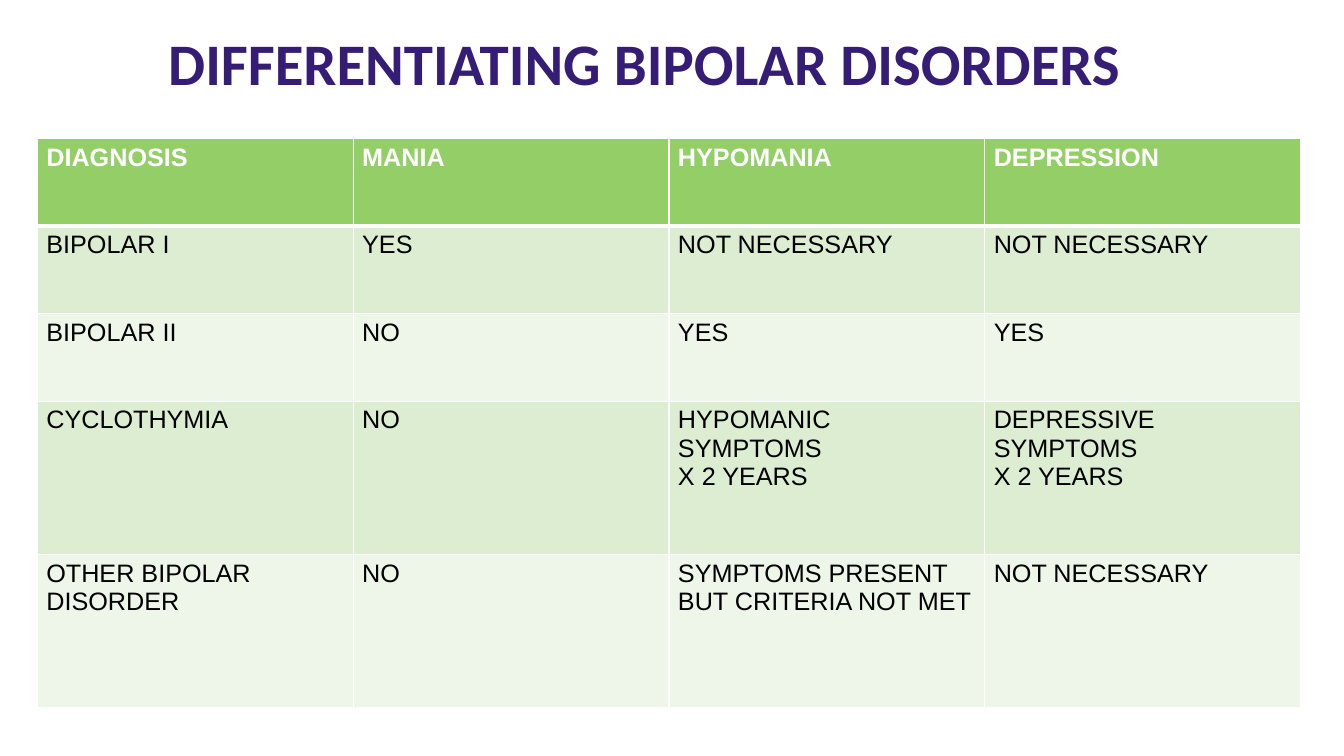
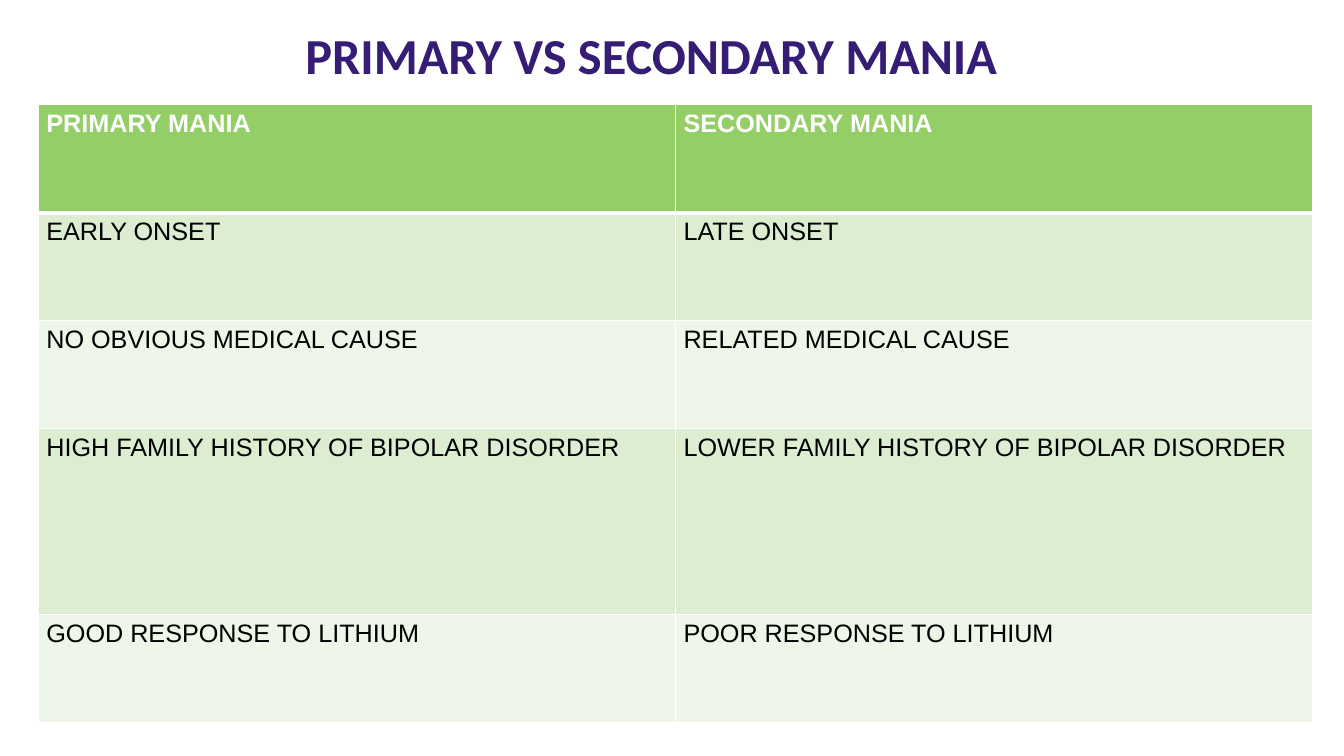
from lxml import etree
from pptx import Presentation, util as u
from pptx.dml.color import RGBColor
from pptx.enum import text
from pptx.oxml.ns import qn

COLORS = {
    "title": "351C75",
    "header": "94CE67",
    "band_dark": "DCEDD2",
    "band_light": "EEF6EA",
    "header_text": "FFFFFF",
    "body_text": "000000",
    "border": "FFFFFF",
}
TITLE_FONT, TABLE_FONT = "Calibri", "Arial"
THIN, THICK = 1, 3


def rgb(name):
    return RGBColor.from_string(COLORS[name])


def style_text(frame, font_name, size, color, bold):
    for paragraph in frame.paragraphs:
        paragraph.alignment = text.PP_ALIGN.LEFT
        for run in paragraph.runs:
            run.font.name = font_name
            run.font.size = u.Pt(size)
            run.font.bold = bold
            run.font.color.rgb = rgb(color)


def add_title(slide, box, wording, size):
    title = slide.shapes.add_textbox(*map(u.Inches, box))
    frame = title.text_frame
    frame.word_wrap = True
    frame.vertical_anchor = text.MSO_ANCHOR.MIDDLE
    frame.text = wording
    style_text(frame, TITLE_FONT, size, "title", True)


def set_borders(cell, top, bottom):
    """Rule all four sides; the side widths are thin, the others given in points."""
    properties = cell._tc.get_or_add_tcPr()
    sides = (("lnL", THIN), ("lnR", THIN), ("lnT", top), ("lnB", bottom))
    for position, (side, width) in enumerate(sides):
        line = etree.Element(qn(f"a:{side}"), w=str(u.Pt(width)))
        fill = etree.SubElement(line, qn("a:solidFill"))
        etree.SubElement(fill, qn("a:srgbClr"), val=COLORS["border"])
        properties.insert(position, line)


def add_banded_table(slide, box, rows, row_heights, side_margin):
    column_count = len(rows[0])
    table = slide.shapes.add_table(
        len(rows), column_count, *map(u.Inches, box)).table
    table.first_row = table.horz_banding = False
    for column in table.columns:
        column.width = u.Inches(box[2] / column_count)
    for r, (wordings, height) in enumerate(zip(rows, row_heights)):
        table.rows[r].height = u.Inches(height)
        is_header = r == 0
        band = "header" if is_header else "band_dark" if r % 2 else "band_light"
        for c, wording in enumerate(wordings):
            cell = table.cell(r, c)
            cell.text_frame.text = wording
            cell.margin_left = cell.margin_right = u.Inches(side_margin)
            cell.margin_top = cell.margin_bottom = u.Inches(0.05)
            cell.fill.solid()
            cell.fill.fore_color.rgb = rgb(band)
            set_borders(cell, top=THICK if r == 1 else THIN,
                        bottom=THICK if is_header else THIN)
            style_text(cell.text_frame, TABLE_FONT, 18,
                       "header_text" if is_header else "body_text", is_header)


def add_disorders_slide(slide):
    add_title(slide, (1.57, 0.21, 9.76, 0.81),
              "DIFFERENTIATING BIPOLAR DISORDERS", 42)
    rows = [
        ("DIAGNOSIS", "MANIA", "HYPOMANIA", "DEPRESSION"),
        ("BIPOLAR I", "YES", "NOT NECESSARY", "NOT NECESSARY"),
        ("BIPOLAR II", "NO", "YES", "YES"),
        ("CYCLOTHYMIA", "NO", "HYPOMANIC SYMPTOMS\nX 2 YEARS",
         "DEPRESSIVE SYMPTOMS\nX 2 YEARS"),
        ("OTHER BIPOLAR DISORDER", "NO",
         "SYMPTOMS PRESENT BUT CRITERIA NOT MET", "NOT NECESSARY"),
    ]
    add_banded_table(slide, (0.37, 1.37, 12.53, 5.66), rows,
                     [0.87] * 3 + [1.52] * 2, side_margin=0.09)


def add_mania_slide(slide):
    add_title(slide, (2.93, 0.14, 7.28, 0.79), "PRIMARY VS SECONDARY MANIA", 36)
    rows = [
        ("PRIMARY MANIA", "SECONDARY MANIA"),
        ("EARLY ONSET", "LATE ONSET"),
        ("NO OBVIOUS MEDICAL CAUSE", "RELATED MEDICAL CAUSE"),
        ("HIGH FAMILY HISTORY OF BIPOLAR DISORDER",
         "LOWER FAMILY HISTORY OF BIPOLAR DISORDER"),
        ("GOOD RESPONSE TO LITHIUM", "POOR RESPONSE TO LITHIUM"),
    ]
    add_banded_table(slide, (0.38, 1.04, 12.64, 6.14), rows,
                     [1.07] * 3 + [1.85, 1.07], side_margin=0.08)


def main():
    deck = Presentation()
    deck.slide_width, deck.slide_height = u.Inches(13.33), u.Inches(7.5)
    blank = deck.slide_layouts[6]
    for add_content in (add_disorders_slide, add_mania_slide):
        add_content(deck.slides.add_slide(blank))
    deck.save("out.pptx")


if __name__ == "__main__":
    main()
